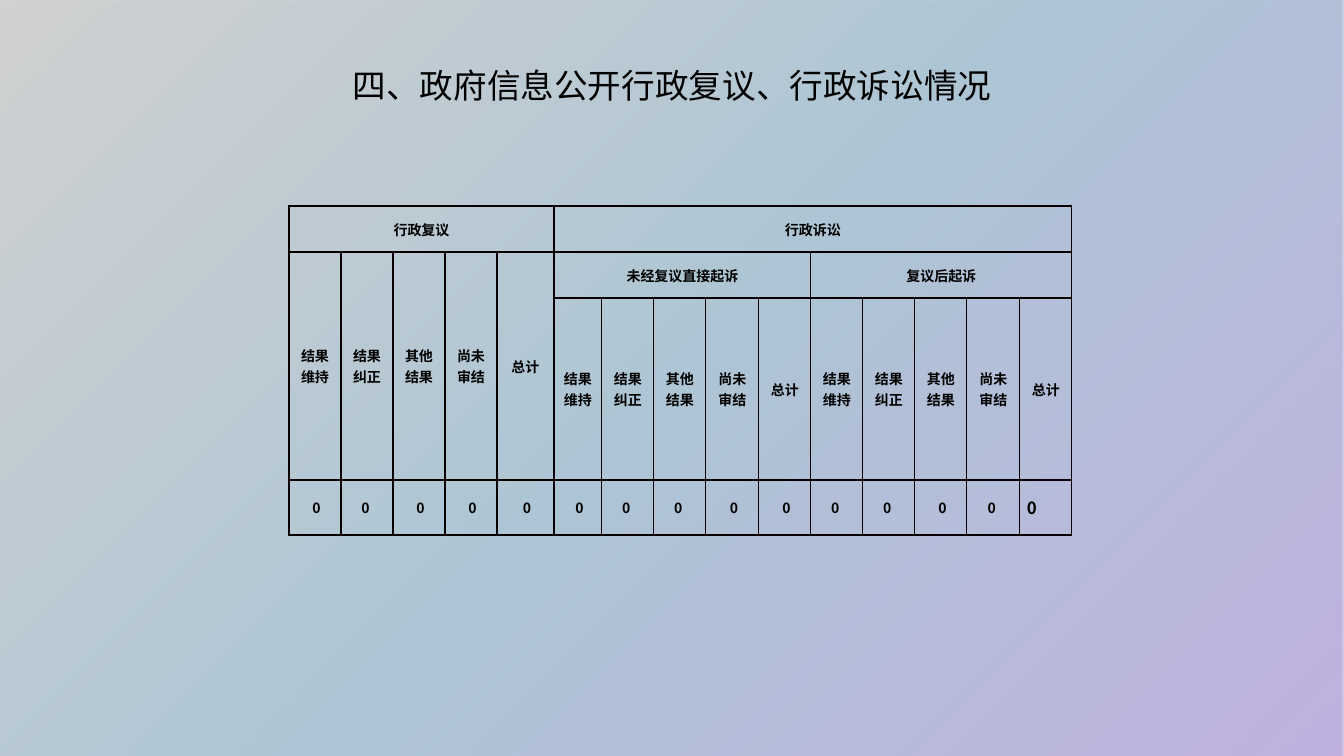
from lxml.etree import SubElement
from pptx import Presentation
from pptx.dml.color import RGBColor
from pptx.enum.shapes import MSO_SHAPE
from pptx.enum.text import MSO_ANCHOR, PP_ALIGN
from pptx.oxml.ns import qn
from pptx.util import Emu, Pt

EMU_PER_PX = 914400 / 100.8
SLIDE_WIDTH, SLIDE_HEIGHT = 1344, 756

OUTCOMES = ["结果维持", "结果纠正", "其他结果", "尚未审结", "总计"]
COUNTS = [" 0", "0 ", " 0", " 0", " 0", " 0", "0 ", "0 ", " 0", " 0",
          "0 ", "0 ", " 0", "0 ", "0"]
COLUMN_WIDTHS = [52] * 4 + [57, 48, 52, 52, 53, 52, 52, 52, 52, 53, 52]
ROW_HEIGHTS = [46, 46, 182, 55]


def px(length):
    return Emu(round(length * EMU_PER_PX))


def color(hex_string):
    return RGBColor.from_string(hex_string)


class SlideBuilder:
    cjk_font = "Noto Sans CJK SC"
    title_font = "Calibri"
    text_color = "000000"
    border_color = "080000"

    def __init__(self, slide):
        self.slide = slide

    def format_paragraph(self, paragraph, size, font_name, bold=False,
                         align=PP_ALIGN.CENTER):
        paragraph.alignment = align
        for run in paragraph.runs:
            run.font.size = Pt(size)
            run.font.bold = bold
            run.font.name = font_name
            run.font.color.rgb = color(self.text_color)
            east_asian = SubElement(run.font._element, qn("a:ea"))
            east_asian.set("typeface", self.cjk_font)

    def gradient_backdrop(self, stops, angle, opacity):
        """Cover the slide; the angle is counter-clockwise in degrees."""
        shape = self.slide.shapes.add_shape(
            MSO_SHAPE.RECTANGLE, 0, 0, px(SLIDE_WIDTH), px(SLIDE_HEIGHT))
        shape.shadow.inherit = False
        shape.line.fill.background()
        shape.fill.gradient()
        shape.fill.gradient_angle = angle
        stop_list = shape._element.spPr.find(qn("a:gradFill")).find(qn("a:gsLst"))
        for default_stop in list(stop_list):
            stop_list.remove(default_stop)
        for position, hex_string in stops:
            stop = SubElement(stop_list, qn("a:gs"), pos=str(position * 1000))
            stop_color = SubElement(stop, qn("a:srgbClr"), val=hex_string)
            SubElement(stop_color, qn("a:alpha"), val=str(opacity * 1000))

    def title(self, text, left, top, width, height, size):
        text_box = self.slide.shapes.add_textbox(
            px(left), px(top), px(width), px(height))
        text_frame = text_box.text_frame
        text_frame.word_wrap = True
        text_frame.text = text
        paragraph = text_frame.paragraphs[0]
        paragraph.line_spacing = 0.9
        self.format_paragraph(paragraph, size, self.title_font)

    def table(self, left, top, column_widths, row_heights):
        frame = self.slide.shapes.add_table(
            len(row_heights), len(column_widths), px(left), px(top),
            px(sum(column_widths)), px(sum(row_heights)))
        table = frame.table
        table.first_row = False
        table.horz_banding = False
        for column, width in zip(table.columns, column_widths):
            column.width = px(width)
        for row, height in zip(table.rows, row_heights):
            row.height = px(height)
        for cell in table.iter_cells():
            self.cell_borders(cell)
            cell.fill.background()
            cell.margin_left = cell.margin_right = px(7)
            cell.margin_top = cell.margin_bottom = 0
            cell.vertical_anchor = MSO_ANCHOR.MIDDLE
        return table

    def cell_borders(self, cell):
        properties = cell._tc.get_or_add_tcPr()
        for side in ("a:lnL", "a:lnR", "a:lnT", "a:lnB"):
            line = SubElement(properties, qn(side), w=str(Pt(1)))
            fill = SubElement(line, qn("a:solidFill"))
            SubElement(fill, qn("a:srgbClr"), val=self.border_color)

    def cell(self, table, row, column, text, row_span=1, column_span=1,
             size=10, align=PP_ALIGN.CENTER):
        cell = table.cell(row, column)
        if row_span * column_span > 1:
            cell.merge(table.cell(row + row_span - 1, column + column_span - 1))
        cell.text_frame.text = text
        self.format_paragraph(cell.text_frame.paragraphs[0], size,
                              self.cjk_font, bold=True, align=align)


def main():
    presentation = Presentation()
    presentation.slide_width = px(SLIDE_WIDTH)
    presentation.slide_height = px(SLIDE_HEIGHT)
    builder = SlideBuilder(
        presentation.slides.add_slide(presentation.slide_layouts[6]))

    builder.gradient_backdrop(
        [(0, "8062C2"), (50, "5B8EAC"), (100, "A5A5A5")], angle=135, opacity=50)
    builder.title("四、政府信息公开行政复议、行政诉讼情况",
                  0, 64, SLIDE_WIDTH, 54, size=24)

    table = builder.table(289, 206, COLUMN_WIDTHS, ROW_HEIGHTS)
    group = len(OUTCOMES)
    builder.cell(table, 0, 0, "行政复议", column_span=group)
    builder.cell(table, 0, group, "行政诉讼", column_span=2 * group)
    builder.cell(table, 1, group, "未经复议直接起诉", column_span=group)
    builder.cell(table, 1, 2 * group, "复议后起诉", column_span=group)
    for index, outcome in enumerate(OUTCOMES):
        builder.cell(table, 1, index, outcome, row_span=2)
        builder.cell(table, 2, group + index, outcome)
        builder.cell(table, 2, 2 * group + index, outcome)
    for column, count in enumerate(COUNTS[:-1]):
        builder.cell(table, 3, column, count)
    builder.cell(table, 3, len(COUNTS) - 1, COUNTS[-1],
                 size=12, align=PP_ALIGN.LEFT)

    presentation.save("out.pptx")


if __name__ == "__main__":
    main()
